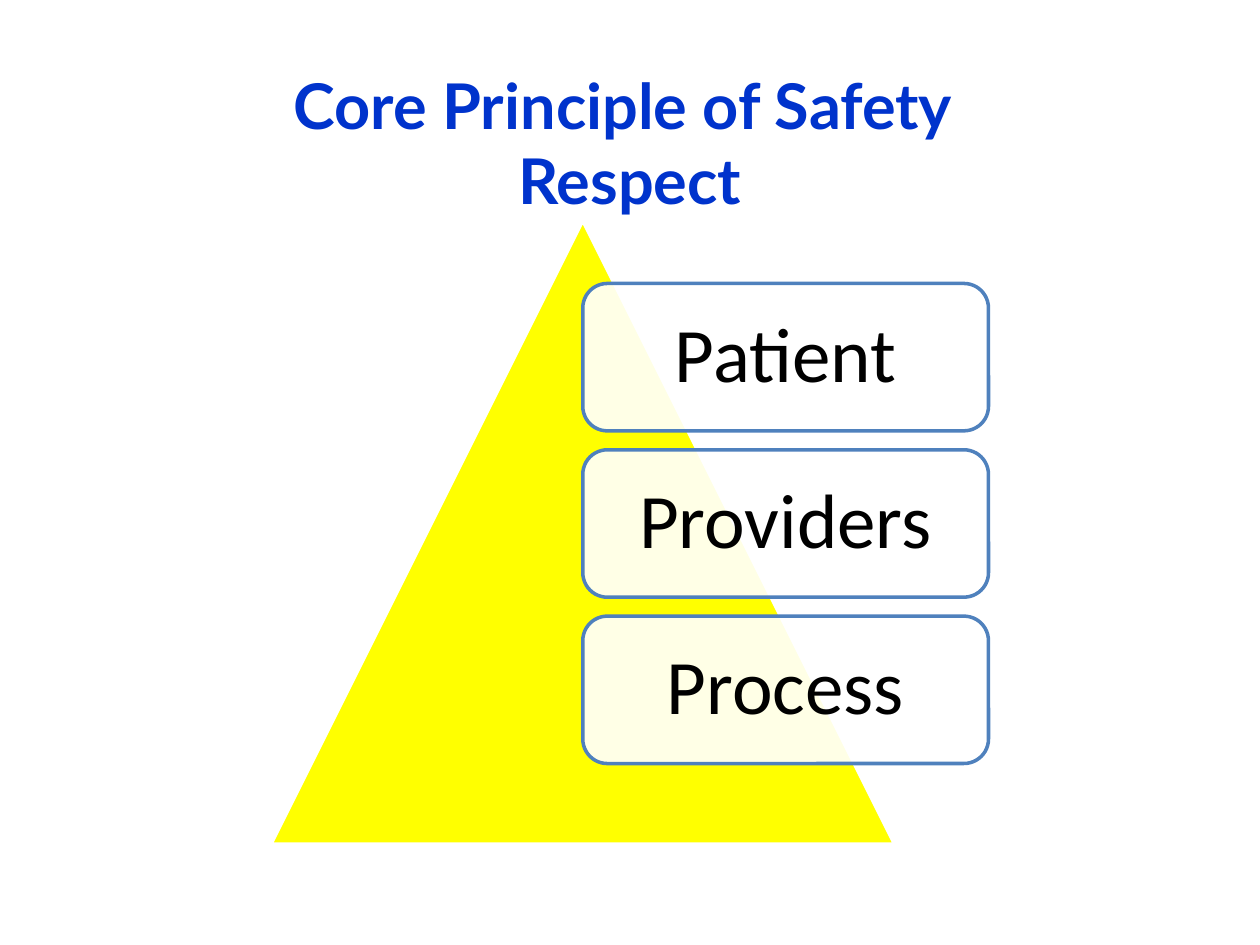
from dataclasses import dataclass

from lxml.etree import SubElement
from pptx import Presentation
from pptx.dml.color import RGBColor as RGB
from pptx.enum.shapes import MSO_SHAPE as SHAPE
from pptx.enum.text import MSO_ANCHOR as ANCHOR, PP_ALIGN as ALIGN
from pptx.oxml.ns import qn
from pptx.util import Inches, Pt


@dataclass(frozen=True)
class Theme:
    title_color: RGB = RGB(0x00, 0x33, 0xCC)
    pyramid_color: RGB = RGB(0xFF, 0xFF, 0x00)
    card_color: RGB = RGB(0xFF, 0xFF, 0xFF)
    border_color: RGB = RGB(0x4F, 0x81, 0xBD)
    text_color: RGB = RGB(0x00, 0x00, 0x00)
    title_font: str = "Lato"
    card_font: str = "Calibri"
    title_size: Pt = Pt(36)
    card_size: Pt = Pt(44)
    line_width: Pt = Pt(2)
    card_opacity: int = 90


class PrincipleSlide:
    def __init__(self, slide, theme):
        self.shapes = slide.shapes
        self.theme = theme

    def _write(self, shape, text, font_name, size, color, bold=False):
        frame = shape.text_frame
        frame.word_wrap = True
        frame.vertical_anchor = ANCHOR.MIDDLE
        paragraph = frame.paragraphs[0]
        paragraph.text = text
        paragraph.alignment = ALIGN.CENTER
        for run in paragraph.runs:
            run.font.name = font_name
            run.font.size = size
            run.font.bold = bold
            run.font.color.rgb = color
        return paragraph

    def _block(self, preset, box, fill, border):
        block = self.shapes.add_shape(preset, *map(Inches, box))
        block.shadow.inherit = False
        block.fill.solid()
        block.fill.fore_color.rgb = fill
        block.line.color.rgb = border
        block.line.width = self.theme.line_width
        return block

    def title(self, text, box):
        theme = self.theme
        heading = self.shapes.add_textbox(*map(Inches, box))
        self._write(heading, text, theme.title_font, theme.title_size,
                    theme.title_color, bold=True)

    def pyramid(self, box):
        self._block(SHAPE.ISOSCELES_TRIANGLE, box,
                    self.theme.pyramid_color, self.theme.card_color)

    def card(self, text, box):
        theme = self.theme
        card = self._block(SHAPE.ROUNDED_RECTANGLE, box,
                           theme.card_color, theme.border_color)
        fill_color = card.fill._xPr.find(f"{qn('a:solidFill')}/{qn('a:srgbClr')}")
        SubElement(fill_color, qn("a:alpha"), val=str(theme.card_opacity * 1000))
        frame = card.text_frame
        frame.margin_left = frame.margin_right = Inches(0.18)
        frame.margin_top = frame.margin_bottom = Inches(0.18)
        label = self._write(card, text, theme.card_font, theme.card_size,
                            theme.text_color)
        label.line_spacing = 0.9


def main():
    presentation = Presentation()
    presentation.slide_width = Inches(10)
    presentation.slide_height = Inches(7.5)
    blank_layout = presentation.slide_layouts[6]
    principle = PrincipleSlide(presentation.slides.add_slide(blank_layout), Theme())

    principle.title("Core Principle of Safety \vRespect", (0.5, 0.5, 9, 1.25))
    pyramid_left, pyramid_top, pyramid_side = 2.15, 1.75, 4.95
    principle.pyramid((pyramid_left, pyramid_top, pyramid_side, pyramid_side))

    card_left = pyramid_left + pyramid_side / 2
    first_top, card_width, card_height, gap = 2.25, 3.22, 1.17, 0.15
    for index, respected in enumerate(("Patient", "Providers", "Process")):
        card_top = first_top + index * (card_height + gap)
        principle.card(respected, (card_left, card_top, card_width, card_height))

    presentation.save("out.pptx")


if __name__ == "__main__":
    main()
